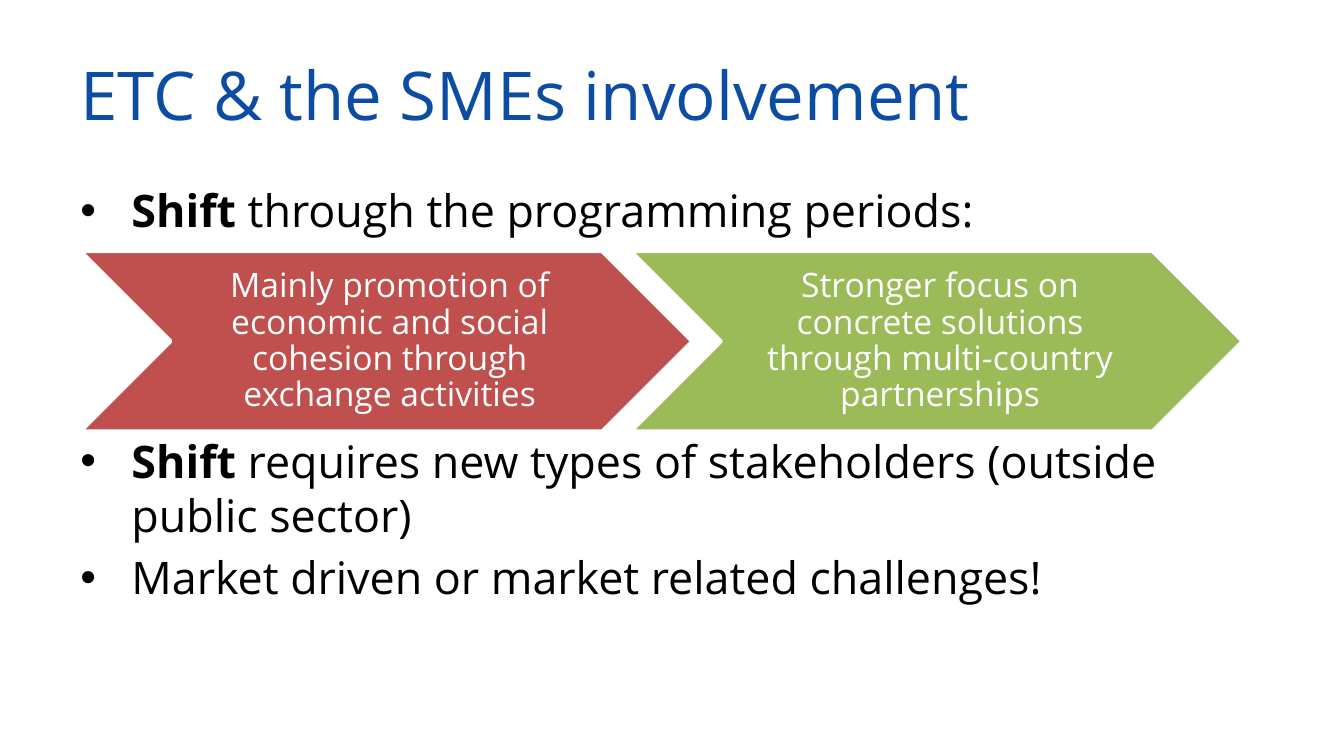
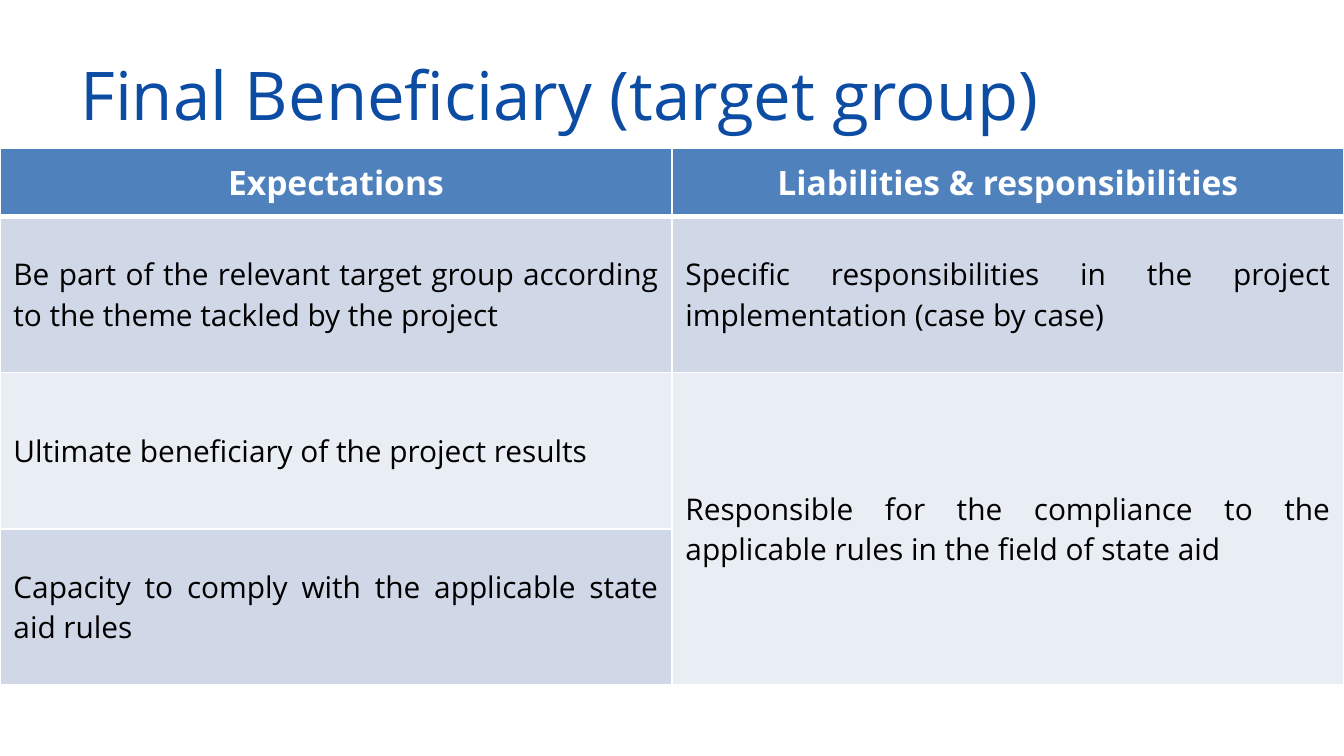
from dataclasses import dataclass
from typing import Any, NamedTuple

from lxml import etree
from pptx import Presentation
from pptx.dml.color import RGBColor
from pptx.enum.shapes import MSO_SHAPE
from pptx.enum.text import MSO_ANCHOR, PP_ALIGN
from pptx.oxml.ns import qn
from pptx.util import Inches, Length, Pt

CHEVRON = MSO_SHAPE.CHEVRON
TOP, MIDDLE = MSO_ANCHOR.TOP, MSO_ANCHOR.MIDDLE
LEFT, CENTER, JUSTIFY = PP_ALIGN.LEFT, PP_ALIGN.CENTER, PP_ALIGN.JUSTIFY

SLIDE_WIDTH = Inches(10)
SLIDE_HEIGHT = Length(SLIDE_WIDTH * 9 // 16)


@dataclass(frozen=True)
class Theme:
    font: str = "Open Sans"
    title: str = "0C4CA3"
    ink: str = "000000"
    white: str = "FFFFFF"
    earlier: str = "C0504D"
    later: str = "9BBB59"
    header: str = "4F81BD"
    band_dark: str = "D0D8E8"
    band_light: str = "E9EDF4"
    title_size: int = 36
    body_size: int = 24
    label_size: int = 18
    cell_size: int = 16


THEME = Theme()


class Area(NamedTuple):
    """Left and width in percent of the slide's width, top and height of its height."""
    left: float
    top: float
    width: float
    height: float

    def lengths(self) -> tuple[Length, ...]:
        sides = (SLIDE_WIDTH, SLIDE_HEIGHT) * 2
        return tuple(Length(round(side * share / 100)) for side, share in zip(sides, self))


class Bullet(NamedTuple):
    strong: str
    plain: str
    space_before: float


class Stage(NamedTuple):
    text: str
    color: str


class Entry(NamedTuple):
    row: int
    column: int
    text: str
    fill: str
    row_span: int = 1


TITLE_AREA = Area(5, 4.1, 90, 16.7)
BODY_AREA = Area(5, 23.3, 89.9, 66)
STAGE_AREA = Area(6, 33.24, 45.5, 23.82)
STAGE_STEP = 0.9 * STAGE_AREA.width
STAGE_TEXT_INDENT, STAGE_TEXT_WIDTH = 6.7, 32.1
TABLE_AREA = Area(0, 19.57, 100, 71)
HEADER_ROW, TEXT_ROW = 9.07, 20.66
BULLET_INDENT = Inches(0.38)

BULLETS = (
    Bullet("Shift", " through the programming periods:", 0),
    Bullet("Shift", " requires new types of stakeholders (outside public sector)", 105.6),
    Bullet("", "Market driven or market related challenges!", 4.8),
)
STAGES = (
    Stage("Mainly promotion of economic and social cohesion through exchange activities",
          THEME.earlier),
    Stage("Stronger focus on concrete solutions through multi-country partnerships",
          THEME.later),
)
ENTRIES = (
    Entry(0, 0, "Expectations", THEME.header),
    Entry(0, 1, "Liabilities & responsibilities", THEME.header),
    Entry(1, 0, "Be part of the relevant target group according to the theme tackled "
          "by the project", THEME.band_dark),
    Entry(1, 1, "Specific responsibilities in the project implementation (case by case)",
          THEME.band_dark),
    Entry(2, 0, "Ultimate beneficiary of the project results", THEME.band_light),
    Entry(2, 1, "Responsible for the compliance to the applicable rules in the field "
          "of state aid", THEME.band_light, 2),
    Entry(3, 0, "Capacity to comply with the applicable state aid rules", THEME.band_dark),
)


def apply(target: Any, values: dict[str, Any]) -> None:
    for name, value in values.items():
        setattr(target, name, value)


def add_run(paragraph: Any, text: str, size: int, color: str, bold: bool = False) -> None:
    run = paragraph.add_run()
    run.text = text
    apply(run.font, {"name": THEME.font, "size": Pt(size), "bold": bold})
    run.font.color.rgb = RGBColor.from_string(color)


def add_text_frame(slide: Any, area: Area, anchor: Any) -> Any:
    frame = slide.shapes.add_textbox(*area.lengths()).text_frame
    apply(frame, {"word_wrap": True, "vertical_anchor": anchor})
    return frame


def add_title(slide: Any, text: str) -> None:
    paragraph = add_text_frame(slide, TITLE_AREA, MIDDLE).paragraphs[0]
    paragraph.alignment = LEFT
    add_run(paragraph, text, THEME.title_size, THEME.title)


def set_bullet(paragraph: Any) -> None:
    properties = paragraph._p.get_or_add_pPr()
    properties.set("marL", str(BULLET_INDENT))
    properties.set("indent", str(-BULLET_INDENT))
    etree.SubElement(properties, qn("a:buFont"), typeface="Arial")
    etree.SubElement(properties, qn("a:buChar"), char="•")


def add_bullets(slide: Any, bullets: tuple[Bullet, ...]) -> None:
    frame = add_text_frame(slide, BODY_AREA, TOP)
    for index, bullet in enumerate(bullets):
        paragraph = frame.add_paragraph() if index else frame.paragraphs[0]
        set_bullet(paragraph)
        paragraph.space_before = Pt(bullet.space_before)
        if bullet.strong:
            add_run(paragraph, bullet.strong, THEME.body_size, THEME.ink, bold=True)
        add_run(paragraph, bullet.plain, THEME.body_size, THEME.ink)


def add_stage(slide: Any, stage: Stage, index: int) -> None:
    area = STAGE_AREA._replace(left=STAGE_AREA.left + index * STAGE_STEP)
    shape = slide.shapes.add_shape(CHEVRON, *area.lengths())
    shape.shadow.inherit = False
    shape.fill.solid()
    shape.fill.fore_color.rgb = RGBColor.from_string(stage.color)
    shape.line.color.rgb = RGBColor.from_string(THEME.white)
    shape.line.width = Pt(2)

    text_area = area._replace(left=area.left + STAGE_TEXT_INDENT, width=STAGE_TEXT_WIDTH)
    frame = add_text_frame(slide, text_area, MIDDLE)
    margin = Inches(0.03)
    apply(frame, {"margin_left": Inches(0.08), "margin_top": margin,
                  "margin_right": margin, "margin_bottom": margin})
    paragraph = frame.paragraphs[0]
    apply(paragraph, {"alignment": CENTER, "line_spacing": 0.9})
    add_run(paragraph, stage.text, THEME.label_size, THEME.white)


def set_borders(cell: Any, row: int) -> None:
    """Draw white borders, with a thicker rule below the header row."""
    widths = {"a:lnL": 1, "a:lnR": 1,
              "a:lnT": 3 if row == 1 else 1, "a:lnB": 3 if row == 0 else 1}
    properties = cell._tc.get_or_add_tcPr()
    for position, (tag, width) in enumerate(widths.items()):
        line = etree.Element(qn(tag), w=str(Pt(width)))
        fill = etree.SubElement(line, qn("a:solidFill"))
        etree.SubElement(fill, qn("a:srgbClr"), val=THEME.white)
        properties.insert(position, line)


def fill_cell(cell: Any, entry: Entry) -> None:
    is_header = entry.row == 0
    cell.vertical_anchor = MIDDLE
    paragraph = cell.text_frame.paragraphs[0]
    paragraph.alignment = CENTER if is_header else JUSTIFY
    add_run(paragraph, entry.text,
            THEME.label_size if is_header else THEME.cell_size,
            THEME.white if is_header else THEME.ink, bold=is_header)


def add_table(slide: Any, entries: tuple[Entry, ...]) -> None:
    row_count = 1 + max(entry.row for entry in entries)
    column_count = 1 + max(entry.column for entry in entries)
    table = slide.shapes.add_table(row_count, column_count, *TABLE_AREA.lengths()).table
    apply(table, {"first_row": True, "horz_banding": False})
    for index, row in enumerate(table.rows):
        share = TEXT_ROW if index else HEADER_ROW
        row.height = Length(round(SLIDE_HEIGHT * share / 100))
    for entry in entries:
        first = table.cell(entry.row, entry.column)
        if entry.row_span > 1:
            first.merge(table.cell(entry.row + entry.row_span - 1, entry.column))
        fill_cell(first, entry)
        for row in range(entry.row, entry.row + entry.row_span):
            cell = table.cell(row, entry.column)
            cell.fill.solid()
            cell.fill.fore_color.rgb = RGBColor.from_string(entry.fill)
            set_borders(cell, row)


def add_slide(presentation: Any, title: str) -> Any:
    slide = presentation.slides.add_slide(presentation.slide_layouts[6])
    add_title(slide, title)
    return slide


def main() -> None:
    presentation = Presentation()
    apply(presentation, {"slide_width": SLIDE_WIDTH, "slide_height": SLIDE_HEIGHT})

    involvement = add_slide(presentation, "ETC & the SMEs involvement")
    add_bullets(involvement, BULLETS)
    for index, stage in enumerate(STAGES):
        add_stage(involvement, stage, index)

    beneficiary = add_slide(presentation, "Final Beneficiary (target group)")
    add_table(beneficiary, ENTRIES)

    presentation.save("out.pptx")


if __name__ == "__main__":
    main()
